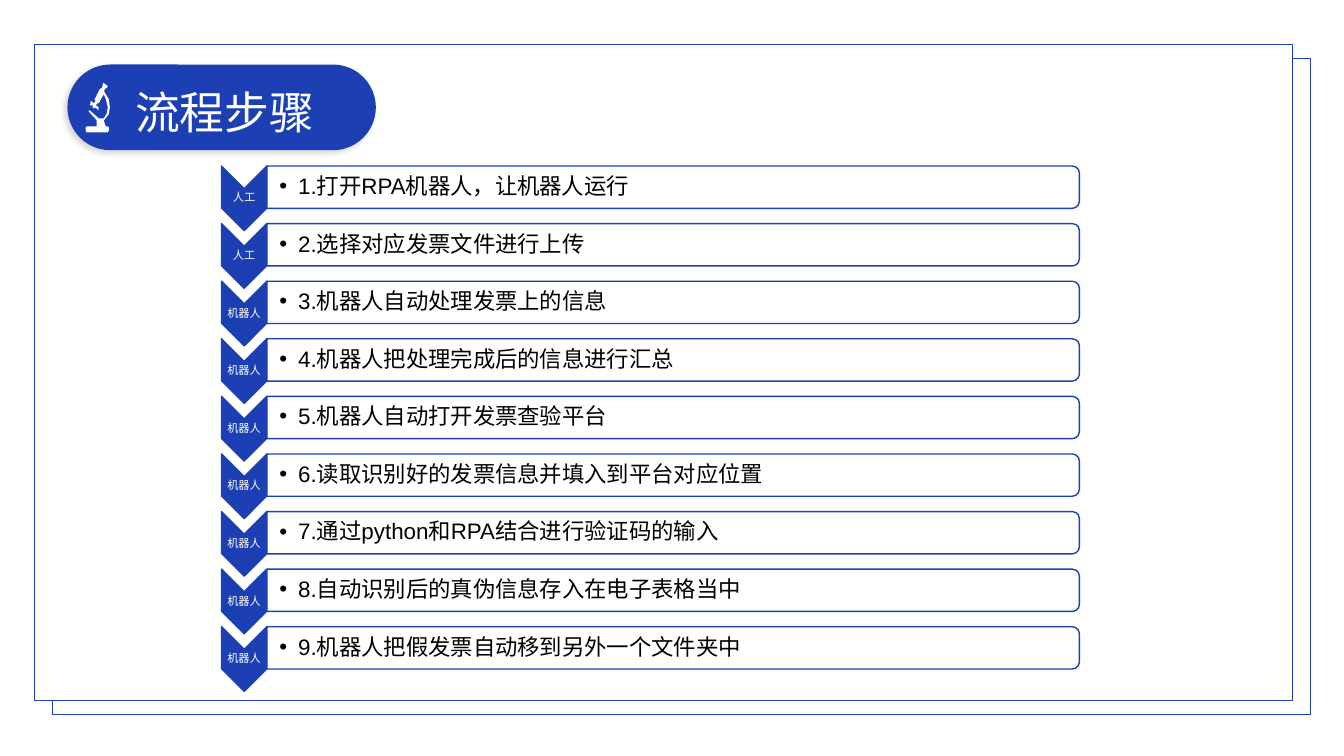
import dataclasses

import lxml.etree
import pptx
import pptx.dml.color
import pptx.enum.shapes
import pptx.enum.text
import pptx.oxml.ns
import pptx.util

Pt = pptx.util.Pt
qn = pptx.oxml.ns.qn
Kind = pptx.enum.shapes.MSO_SHAPE
Align = pptx.enum.text.PP_ALIGN
Anchor = pptx.enum.text.MSO_ANCHOR


@dataclasses.dataclass(frozen=True)
class Theme:
    blue: str = "1C40B3"
    white: str = "FFFFFF"
    black: str = "000000"
    head: str = "Calibri"
    body: str = "Arial"
    title: float = 32
    step: float = 16
    label: float = 8
    thin: float = 0.5
    line: float = 1


THEME = Theme()

STEPS = [
    ("人工", "1.打开RPA机器人，让机器人运行"),
    ("人工", "2.选择对应发票文件进行上传"),
    ("机器人", "3.机器人自动处理发票上的信息"),
    ("机器人", "4.机器人把处理完成后的信息进行汇总"),
    ("机器人", "5.机器人自动打开发票查验平台"),
    ("机器人", "6.读取识别好的发票信息并填入到平台对应位置"),
    ("机器人", "7.通过python和RPA结合进行验证码的输入"),
    ("机器人", "8.自动识别后的真伪信息存入在电子表格当中"),
    ("机器人", "9.机器人把假发票自动移到另外一个文件夹中"),
]

# Microscope outline, in hundredths of an inch
SCOPE = [
    (22, 44), (20, 44), (18, 38), (19, 37), (22.6, 31.8), (24, 25),
    (22.8, 16.6), (20, 12), (19, 11), (19, 10), (18, 9), (20, 6), (21, 6),
    (22, 4), (18, 1), (17, 1), (17, 3), (16, 6), (14, 7), (9, 17), (9, 18),
    (10, 19), (8, 21), (6, 19), (5, 19), (5, 21), (4, 22), (5, 23), (5, 24),
    (6, 23), (6, 22), (7, 23), (7, 25), (8, 26), (9, 26), (9, 25), (12, 27),
    (12, 28), (13, 27), (13, 25), (10, 23), (12, 21), (13, 21), (18, 12),
    (20.4, 16.6), (22, 25), (21.1, 30.9), (18, 36), (13, 36), (4, 28),
    (3, 28), (3, 29), (11, 38), (11, 44), (1, 44), (0, 45), (0, 48), (1, 50),
    (22, 50), (23, 48), (23, 45),
]


def tint(code):
    return pptx.dml.color.RGBColor.from_string(code)


def paint(shape, fill, line=None, width=THEME.line):
    shape.shadow.inherit = False
    shape.fill.solid()
    shape.fill.fore_color.rgb = tint(fill)
    if line:
        shape.line.color.rgb = tint(line)
        shape.line.width = Pt(width)
    else:
        shape.line.fill.background()


def block(slide, kind, box):
    return slide.shapes.add_shape(kind, *map(Pt, box))


def turned(slide, kind, box):
    """Add a shape turned 90 degrees so that it shows inside box."""
    x, y, w, h = box
    shape = block(slide, kind, (x + (w - h) / 2, y + (h - w) / 2, h, w))
    shape.rotation = 90
    return shape


def write(slide, box, text, font, size, color, inset=(0, 0, 0, 0),
          anchor=Anchor.TOP):
    """Add a one-line text box and return its paragraph."""
    frame = slide.shapes.add_textbox(*map(Pt, box)).text_frame
    frame.word_wrap = True
    frame.vertical_anchor = anchor
    (frame.margin_left, frame.margin_top,
     frame.margin_right, frame.margin_bottom) = map(Pt, inset)
    para = frame.paragraphs[0]
    run = para.add_run()
    run.text = text
    run.font.name = font
    run.font.size = Pt(size)
    run.font.color.rgb = tint(color)
    return para


def bullet(para, indent):
    para.level = 1
    props = para._p.get_or_add_pPr()
    props.set("marL", str(Pt(indent)))
    props.set("indent", str(-Pt(indent)))
    lxml.etree.SubElement(props, qn("a:buFont"), typeface=THEME.body)
    lxml.etree.SubElement(props, qn("a:buChar"), char="•")


def fade(shape, alpha):
    color = shape.fill._xPr.find(".//" + qn("a:srgbClr"))
    lxml.etree.SubElement(color, qn("a:alpha"), val=str(alpha * 1000))


def shade(shape):
    """Give the shape a soft shadow towards the lower left."""
    effects = shape._element.spPr.find(qn("a:effectLst"))
    outer = lxml.etree.SubElement(
        effects, qn("a:outerShdw"), blurRad=str(Pt(4)), dist=str(Pt(3)),
        dir=str(135 * 60000), algn="tr", rotWithShape="0")
    color = lxml.etree.SubElement(outer, qn("a:srgbClr"), val=THEME.black)
    lxml.etree.SubElement(color, qn("a:alpha"), val="14000")


def sheets(slide, box):
    """Draw the two stacked sheets, the rear one shifted down and right."""
    x, y, w, h = box
    for dx, dy in ((12.4, 9.8), (0, 0)):
        sheet = block(slide, Kind.RECTANGLE, (x + dx, y + dy, w, h))
        paint(sheet, THEME.white, THEME.blue, THEME.thin)


def banner(slide, box, text):
    x, y, w, h = box
    pill = block(slide, Kind.ROUNDED_RECTANGLE, box)
    pill.adjustments[0] = 0.5
    paint(pill, THEME.blue)
    shade(pill)
    pen = slide.shapes.build_freeform(*SCOPE[0], scale=Pt(0.72))
    pen.add_line_segments(SCOPE[1:], close=True)
    paint(pen.convert_to_shape(Pt(x + 13), Pt(y + 12.5)), THEME.white)
    write(slide, (x + 48.3, y + 14.4, w - 48.3, 38.9), text,
          THEME.head, THEME.title, THEME.white)


def step(slide, box, label, text):
    """Draw one step: an arrow with its label, then the bar of text."""
    x, y, w, h = box
    wide, tall = 32.4, 46.2
    arrow = turned(slide, Kind.CHEVRON, (x, y, wide, tall))
    paint(arrow, THEME.blue, THEME.blue)
    para = write(slide, (x, y + wide / 2, wide, tall - wide), label,
                 THEME.body, THEME.label, THEME.white, (0.7,) * 4,
                 Anchor.MIDDLE)
    para.alignment = Align.CENTER
    para.line_spacing = 0.9

    left = x + wide
    bar = turned(slide, Kind.ROUND_2_SAME_RECTANGLE, (left, y, w - wide, h))
    paint(bar, THEME.white, THEME.blue)
    fade(bar, 90)
    para = write(slide, (left, y + 1.4, w - wide - 1.4, h - 2.8), text,
                 THEME.body, THEME.step, THEME.black, (8.9, 0.7, 0.7, 0.7),
                 Anchor.MIDDLE)
    bullet(para, 13.5)
    para.line_spacing = 0.9


def steps(slide, box, items):
    x, y, w, h = box
    pitch = h / len(items)
    for i, (label, text) in enumerate(items):
        step(slide, (x, y + i * pitch, w, 30.2), label, text)


def main():
    deck = pptx.Presentation()
    deck.slide_width, deck.slide_height = Pt(960), Pt(540)
    slide = deck.slides.add_slide(deck.slide_layouts[6])
    sheets(slide, (24.7, 31.8, 898.6, 468.7))
    banner(slide, (48.2, 46.1, 220.3, 61.2), "流程步骤")
    steps(slide, (158.2, 118.6, 612.8, 370.2), STEPS)
    deck.save("out.pptx")


if __name__ == "__main__":
    main()
